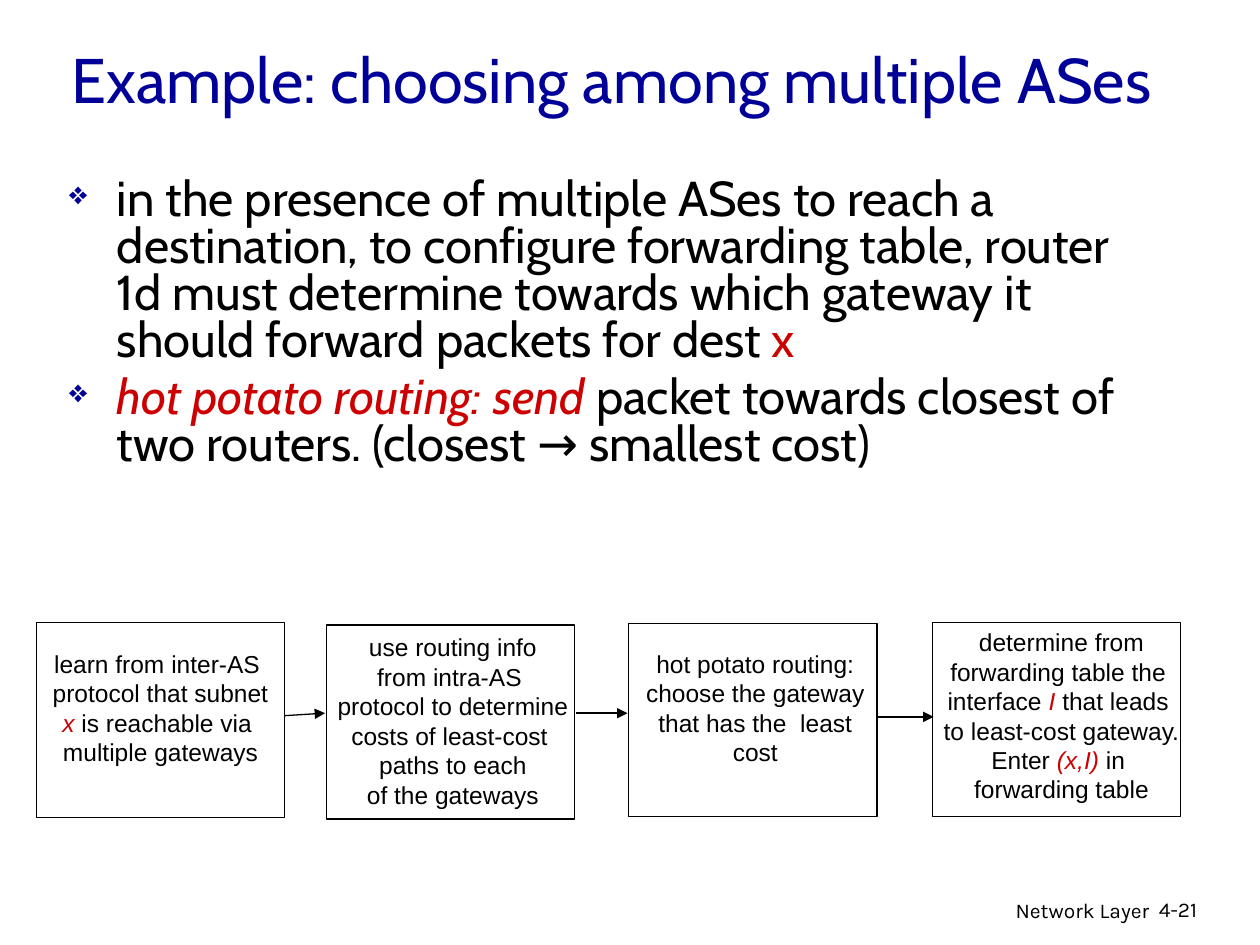
"""Build the slide on choosing among multiple autonomous systems."""
from typing import NamedTuple

from lxml import etree
from pptx import Presentation
from pptx import util as u
from pptx.dml.color import RGBColor
from pptx.enum import shapes, text
from pptx.oxml import ns

COLORS = {"title": "000099", "ink": "000000", "accent": "CC0000"}
BULLET_INDENT = u.Inches(0.38)


class Span(NamedTuple):
    words: str
    accent: bool = False
    italic: bool = False


class Box(NamedTuple):
    left: float
    top: float
    width: float
    height: float


class Style(NamedTuple):
    font: str
    size: int
    color: str = "ink"
    align: text.PP_ALIGN = text.PP_ALIGN.LEFT


class Step(NamedTuple):
    frame: Box
    caption: Box
    wrap: bool
    lines: list


class Arrow(NamedTuple):
    start: tuple
    end: tuple


def term(words: str) -> Span:
    return Span(words, accent=True, italic=True)


STEPS = [
    Step(Box(0.29, 4.94, 1.97, 1.55), Box(0.31, 5.1, 1.93, 1.04), False, [
        [Span("learn from inter-AS ")],
        [Span("protocol that subnet ")],
        [term("x "), Span("is reachable via ")],
        [Span("multiple gateways")],
    ]),
    Step(Box(2.59, 4.96, 1.97, 1.54), Box(2.44, 4.97, 2.31, 1.52), True, [
        [Span("use routing info")],
        [Span("from intra-AS ")],
        [Span("protocol to determine")],
        [Span("costs of least-cost ")],
        [Span("paths to each")],
        [Span("of the gateways")],
    ]),
    Step(Box(4.99, 4.95, 1.97, 1.53), Box(5.01, 5.1, 1.97, 1.04), True, [
        [Span("hot potato routing:")],
        [Span("choose the gateway")],
        [Span("that has the  least cost")],
    ]),
    Step(Box(7.4, 4.94, 1.97, 1.54), Box(7.38, 4.93, 2.09, 1.51), False, [
        [Span("determine from")],
        [Span("forwarding table the ")],
        [Span("interface"), term(" I "), Span("that leads ")],
        [Span("to least-cost gateway. ")],
        [Span("Enter "), term("(x,I) "), Span("in ")],
        [Span("forwarding table")],
    ]),
]
ARROWS = [
    Arrow((2.26, 5.68), (2.58, 5.66)),
    Arrow((4.57, 5.66), (4.98, 5.66)),
    Arrow((6.97, 5.69), (7.41, 5.69)),
]
POINTS = [
    [Span("in the presence of multiple ASes to reach a destination, to configure "
          "forwarding table, router 1d must determine towards which gateway it "
          "should forward packets for dest "), Span("x", accent=True)],
    [term("hot potato routing: send"),
     Span(" packet towards closest of two routers. (closest → smallest cost)")],
]


def rgb(name: str) -> RGBColor:
    return RGBColor.from_string(COLORS[name])


def inches(values: tuple) -> list:
    return [u.Inches(value) for value in values]


def write(frame, lines: list, style: Style) -> None:
    for index, spans in enumerate(lines):
        paragraph = frame.add_paragraph() if index else frame.paragraphs[0]
        paragraph.alignment = style.align
        paragraph.font.name = style.font
        paragraph.font.size = u.Pt(style.size)
        paragraph.font.color.rgb = rgb(style.color)
        for span in spans:
            run = paragraph.add_run()
            run.text = span.words
            if span.accent:
                run.font.color.rgb = rgb("accent")
            if span.italic:
                run.font.italic = True


def add_text(slide, box: Box, lines: list, style: Style, wrap: bool = True):
    frame = slide.shapes.add_textbox(*inches(box)).text_frame
    frame.word_wrap = wrap
    write(frame, lines, style)
    return frame


def add_bullet(paragraph) -> None:
    paragraph.line_spacing = 0.8
    paragraph.space_before = u.Pt(5.6)
    properties = paragraph._p.get_or_add_pPr()
    properties.set("marL", str(BULLET_INDENT))
    properties.set("indent", str(-BULLET_INDENT))
    color = etree.Element(ns.qn("a:buClr"))
    etree.SubElement(color, ns.qn("a:srgbClr"), val=COLORS["title"])
    size = etree.Element(ns.qn("a:buSzPct"), val="65000")
    symbol = etree.Element(ns.qn("a:buChar"), char="❖")
    default_font = properties.find(ns.qn("a:defRPr"))
    for element in (color, size, symbol):
        default_font.addprevious(element)


def add_step(slide, step: Step) -> None:
    frame = slide.shapes.add_shape(shapes.MSO_SHAPE.RECTANGLE, *inches(step.frame))
    frame.shadow.inherit = False
    frame.fill.background()
    frame.line.color.rgb = rgb("ink")
    frame.line.width = u.Pt(0.75)
    caption = add_text(slide, step.caption, step.lines,
                       Style("Arial", 14, align=text.PP_ALIGN.CENTER), step.wrap)
    caption.auto_size = text.MSO_AUTO_SIZE.SHAPE_TO_FIT_TEXT


def add_arrow(slide, arrow: Arrow) -> None:
    connector = slide.shapes.add_connector(
        shapes.MSO_CONNECTOR.STRAIGHT, *inches(arrow.start + arrow.end))
    connector.line.color.rgb = rgb("ink")
    connector.line.width = u.Pt(0.75)
    etree.SubElement(connector.line._get_or_add_ln(), ns.qn("a:tailEnd"), type="triangle")
    etree.SubElement(connector._element.spPr, ns.qn("a:effectLst"))


def main() -> None:
    deck = Presentation()
    deck.slide_width, deck.slide_height = inches((10, 7.5))
    slide = deck.slides.add_slide(deck.slide_layouts[5])

    title = slide.shapes.title
    title.left, title.top, title.width, title.height = inches(Box(0.47, 0, 9.59, 1.25))
    title.text_frame.vertical_anchor = text.MSO_ANCHOR.MIDDLE
    title.text_frame.auto_size = text.MSO_AUTO_SIZE.NONE
    write(title.text_frame, [[Span("Example: choosing among multiple ASes")]],
          Style("Cabin", 36, "title"))

    points = add_text(slide, Box(0.45, 1.37, 8.74, 3.01), POINTS, Style("Cabin", 28))
    for paragraph in points.paragraphs:
        add_bullet(paragraph)

    for step in STEPS:
        add_step(slide, step)
    for arrow in ARROWS:
        add_arrow(slide, arrow)

    add_text(slide, Box(6.05, 7.07, 3.17, 0.31), [[Span("Network Layer")]],
             Style("Karla", 12, align=text.PP_ALIGN.RIGHT))
    add_text(slide, Box(9.1, 7.07, 0.74, 0.3), [[Span("4-21")]], Style("Karla", 12))
    deck.save("out.pptx")


if __name__ == "__main__":
    main()
